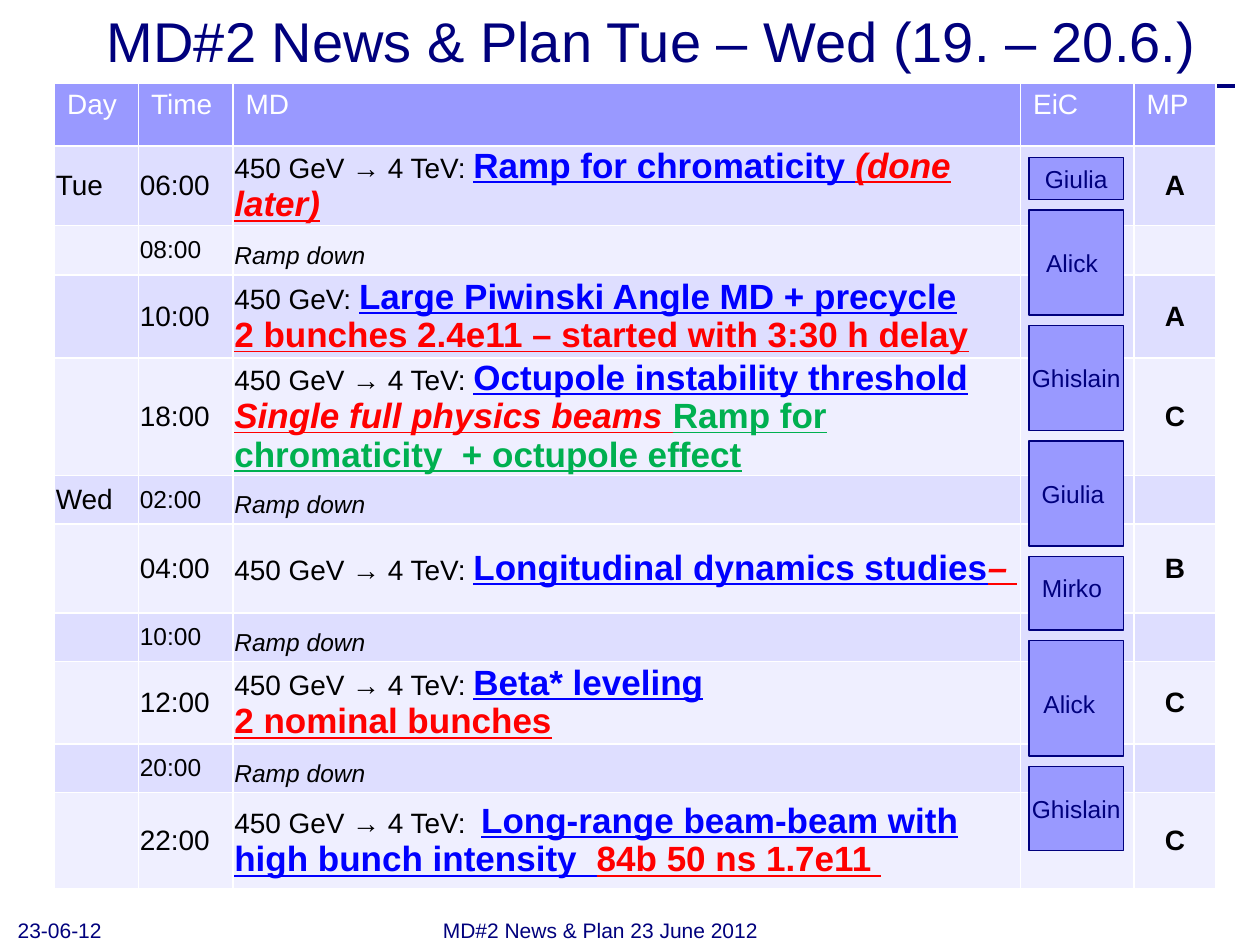
from pptx import Presentation
from pptx.dml.color import RGBColor
from pptx.enum.shapes import MSO_CONNECTOR as CONNECTOR, MSO_SHAPE as SHAPE
from pptx.enum.text import MSO_ANCHOR as ANCHOR, PP_ALIGN as ALIGN
from pptx.oxml.ns import qn
from pptx.util import Inches, Pt
from lxml.etree import SubElement

NAVY = RGBColor(0x00, 0x00, 0x7D)
LILAC = RGBColor(0x99, 0x99, 0xFF)
BANDS = RGBColor(0xDE, 0xDE, 0xFF), RGBColor(0xEF, 0xEF, 0xFF)
WHITE = RGBColor(0xFF, 0xFF, 0xFF)
BLACK = RGBColor(0x00, 0x00, 0x00)
BLUE = RGBColor(0x00, 0x00, 0xFF)
RED = RGBColor(0xFF, 0x00, 0x00)
GREEN = RGBColor(0x00, 0xB0, 0x50)

SLIDE_W, SLIDE_H = Inches(10), Inches(7.5)
UNIT = SLIDE_W / 120  # the slide is a grid of 120 columns by 90 rows

STYLES = {
    "title": {"size": Pt(32), "color": NAVY},
    "footer": {"size": Pt(12), "color": NAVY},
    "shift": {"size": Pt(14), "color": NAVY},
    "head": {"size": Pt(16), "color": WHITE, "bold": False},
    "plain": {"size": Pt(16), "color": BLACK},
    "small": {"size": Pt(14), "color": BLACK},
    "ramp": {"size": Pt(14), "color": BLACK, "italic": True},
    "part": {"size": Pt(16), "color": BLACK, "bold": True},
    "study": {"size": Pt(20), "color": BLUE, "bold": True, "underline": True},
    "news": {"size": Pt(20), "color": RED, "bold": True, "underline": True},
    "remark": {"size": Pt(20), "color": RED, "bold": True, "underline": True, "italic": True},
    "added": {"size": Pt(20), "color": GREEN, "bold": True, "underline": True},
}

COLUMNS = {"Day": 8, "Time": 9, "MD": 75, "EiC": 10.8, "MP": 7.8}
HEAD_ROWS = 6
STUDY_LEADING = Pt(22)
RAMP_DOWN = [[("Ramp down", "ramp")]]
RAMP_UP = ("450 GeV → 4 TeV: ", "plain")

# day, time, paragraphs of the MD cell, machine protection class, height
PLAN = [
    ("Tue", "06:00", [[RAMP_UP, ("Ramp for chromaticity ", "study"),
                       ("(done later)", "remark")]], "A", 7.6),
    ("", "08:00", RAMP_DOWN, "", 4.7),
    ("", "10:00", [[("450 GeV: ", "plain"), ("Large Piwinski Angle MD + precycle", "study")],
                   [("2 bunches 2.4e11 – started with 3:30 h delay", "news")]], "A", 7.9),
    ("", "18:00", [[RAMP_UP, ("Octupole instability threshold", "study")],
                   [("Single full physics beams ", "remark"),
                    ("Ramp for chromaticity  + octupole effect", "added")]], "C", 11.2),
    ("Wed", "02:00", RAMP_DOWN, "", 4.6),
    ("", "04:00", [[RAMP_UP, ("Longitudinal dynamics studies", "study"),
                    ("– ", "remark")]], "B", 8.5),
    ("", "10:00", RAMP_DOWN, "", 4.6),
    ("", "12:00", [[RAMP_UP, ("Beta* leveling", "study")],
                   [("2 nominal bunches", "news")]], "C", 7.9),
    ("", "20:00", RAMP_DOWN, "", 4.6),
    ("", "22:00", [[("450 GeV → 4 TeV:  ", "plain"),
                    ("Long-range beam-beam with high bunch intensity  ", "study"),
                    ("84b 50 ns 1.7e11 ", "news")]], "C", 9.2),
]

# engineer in charge, height of the shift, drop and width of the label
SHIFTS = [
    ("Giulia", 4, 0, 9), ("Alick", 10, 3, 8.2), ("Ghislain", 10, 3, 9),
    ("Giulia", 10, 3, 8.4), ("Mirko", 7, 1, 8.2), ("Alick", 11, 4, 7.7),
    ("Ghislain", 8, 2, 9),
]


def grid(*counts):
    return [round(count * UNIT) for count in counts]


def write(frame, paragraphs, align=ALIGN.LEFT, leading=None):
    """Fill a text frame from lists of (text, style name) runs."""
    for index, runs in enumerate(paragraphs):
        paragraph = frame.add_paragraph() if index else frame.paragraphs[0]
        paragraph.alignment = align
        paragraph.line_spacing = leading
        for text, style in runs:
            run = paragraph.add_run()
            run.text = text
            run.font.name = "Arial"
            for key, value in STYLES[style].items():
                if key == "color":
                    run.font.color.rgb = value
                else:
                    setattr(run.font, key, value)


def add_label(slide, box, text, style, anchor=ANCHOR.TOP, align=ALIGN.LEFT, inset=0.1):
    frame = slide.shapes.add_textbox(*grid(*box)).text_frame
    frame.word_wrap = True
    frame.vertical_anchor = anchor
    frame.margin_left = frame.margin_right = Inches(inset)
    write(frame, [[(text, style)]], align)


def add_heading(slide, left, top, width, height):
    rule = slide.shapes.add_connector(
        CONNECTOR.STRAIGHT, *grid(left, top + 7.8, left + width + 0.6, top + 7.8))
    rule.line.color.rgb = NAVY
    rule.line.width = Pt(2)
    SubElement(rule._element.spPr, qn("a:effectLst"))
    add_label(slide, (left, top, width, height),
              "MD#2 News & Plan Tue – Wed (19. – 20.6.)", "title", ANCHOR.MIDDLE)


def paint_cell(cell, color):
    """White borders first, as the schema wants them before the fill."""
    for side in "LRTB":
        border = SubElement(cell._tc.get_or_add_tcPr(), qn(f"a:ln{side}"), w=str(Pt(1)))
        SubElement(SubElement(border, qn("a:solidFill")), qn("a:srgbClr"), val=str(WHITE))
    cell.fill.solid()
    cell.fill.fore_color.rgb = color


def add_plan(slide, left, top):
    heights = [HEAD_ROWS] + [entry[-1] for entry in PLAN]
    table = slide.shapes.add_table(
        len(heights), len(COLUMNS),
        *grid(left, top, sum(COLUMNS.values()), sum(heights))).table
    for row, height in zip(table.rows, grid(*heights)):
        row.height = height
    for index, (name, width) in enumerate(COLUMNS.items()):
        table.columns[index].width = grid(width)[0]
        cell = table.cell(0, index)
        paint_cell(cell, LILAC)
        write(cell.text_frame, [[(name, "head")]])

    margins = {"margin_left": 0.01, "margin_top": 0, "margin_right": 0.01, "margin_bottom": 0}
    for number, (day, time, study, part, _) in enumerate(PLAN, 1):
        time_style = "small" if study is RAMP_DOWN else "plain"
        contents = [[[(day, "plain")]], [[(time, time_style)]], study, None, [[(part, "part")]]]
        for index, content in enumerate(contents):
            cell = table.cell(number, index)
            paint_cell(cell, BANDS[(number - 1) % 2])
            cell.vertical_anchor = ANCHOR.MIDDLE
            for key, value in margins.items():
                setattr(cell, key, Inches(value))
            if content and content[0][0][0]:
                write(cell.text_frame, content,
                      align=ALIGN.CENTER if index == 4 else ALIGN.LEFT,
                      leading=STUDY_LEADING if index == 2 else None)


def add_shifts(slide, left, top, width, gap=1):
    for engineer, height, drop, label_width in SHIFTS:
        block = slide.shapes.add_shape(SHAPE.RECTANGLE, *grid(left, top, width, height))
        block.shadow.inherit = False
        block.fill.solid()
        block.fill.fore_color.rgb = LILAC
        block.line.color.rgb = NAVY
        block.line.width = Pt(1)
        add_label(slide, (left, top + drop, label_width, 4), engineer, "shift",
                  align=ALIGN.CENTER, inset=0)
        top += height + gap


def add_footer(slide, top, height):
    for left, width, text in [(0.5, 28, "23-06-12"), (41, 38, "MD#2 News & Plan 23 June 2012")]:
        add_label(slide, (left, top, width, height), text, "footer", ANCHOR.BOTTOM)


def main():
    deck = Presentation()
    deck.slide_width, deck.slide_height = SLIDE_W, SLIDE_H
    slide = deck.slides.add_slide(deck.slide_layouts[6])
    add_heading(slide, left=9, top=0.4, width=108, height=6.8)
    add_plan(slide, left=5.2, top=7.9)
    add_shifts(slide, left=98, top=15, width=9)
    add_footer(slide, top=87, height=3.4)
    deck.save("out.pptx")


if __name__ == "__main__":
    main()
